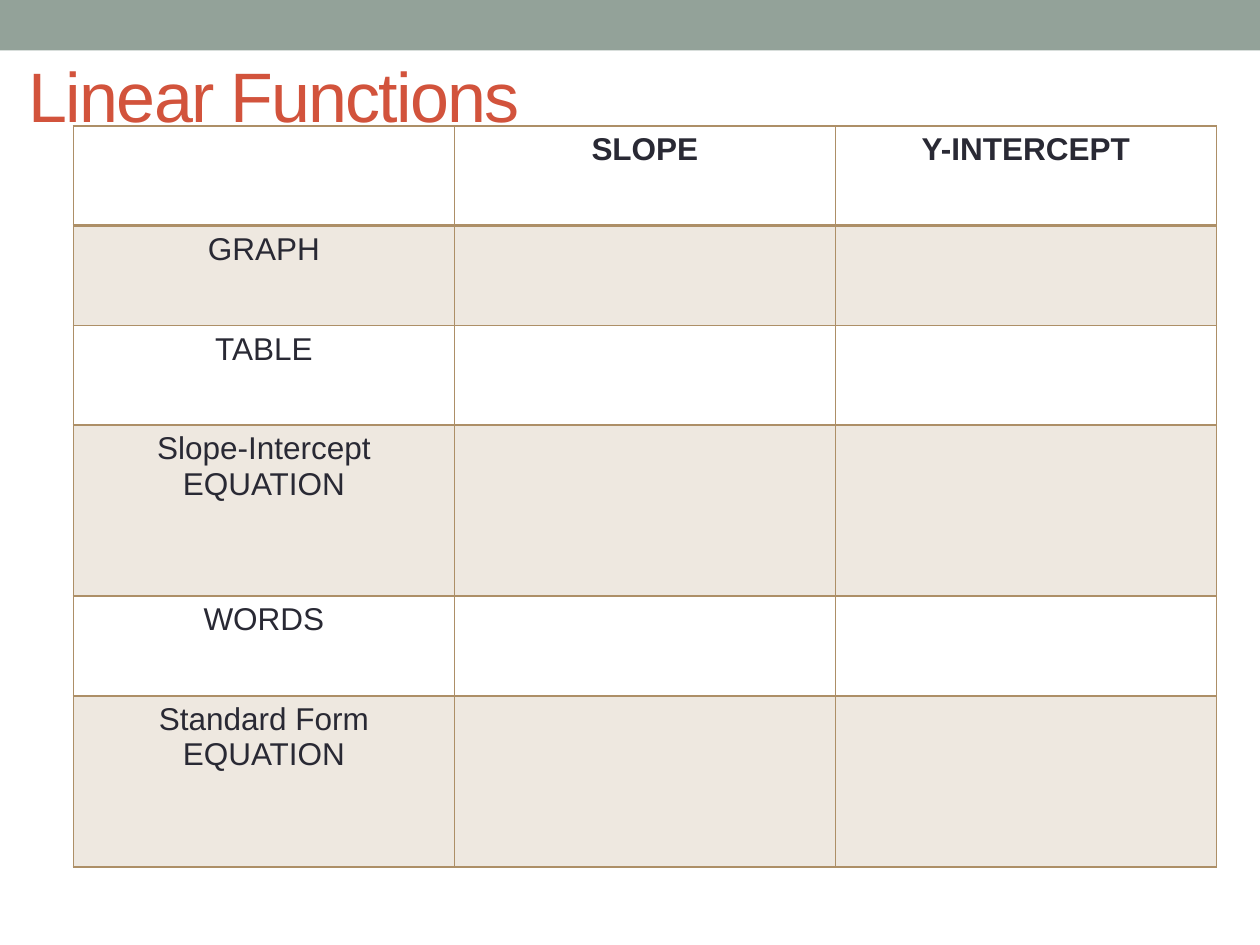
"""Build the Linear Functions comparison table slide."""
from dataclasses import dataclass

import lxml.etree
import pptx
import pptx.dml.color
import pptx.enum.shapes
import pptx.enum.text
import pptx.oxml.ns
import pptx.slide
import pptx.table
import pptx.text.text
import pptx.util

Cm = pptx.util.Cm
qn = pptx.oxml.ns.qn


@dataclass(frozen=True)
class Theme:
    """Colours, font and type sizes of the slide."""
    font: str = "Arial"
    banner: str = "93A299"
    title: str = "D2533C"
    text: str = "292934"
    table: str = "AD8F67"
    title_size: int = 40
    table_size: int = 18
    title_spacing: int = -100
    band_opacity: int = 20000


@dataclass(frozen=True)
class TableRow:
    """First-column label, remaining entries and height in centimetres."""
    cells: tuple[str, str, str]
    height: float = 2.01
    header: bool = False
    banded: bool = False


THEME = Theme()
COLUMN_WIDTH = 7.68
ROWS = (
    TableRow(("", "SLOPE", "Y-INTERCEPT"), header=True),
    TableRow(("GRAPH", "", ""), banded=True),
    TableRow(("TABLE", "", "")),
    TableRow(("Slope-Intercept EQUATION", "", ""), height=3.45, banded=True),
    TableRow(("WORDS", "", "")),
    TableRow(("Standard Form EQUATION", "", ""), height=3.45, banded=True),
)


def rgb(color: str) -> pptx.dml.color.RGBColor:
    """Convert a hexadecimal string to a colour."""
    return pptx.dml.color.RGBColor.from_string(color)


def style_paragraph(paragraph: pptx.text.text._Paragraph, size: int, color: str,
                    bold: bool = False) -> None:
    """Set the font of a whole paragraph."""
    font = paragraph.font
    font.name = THEME.font
    font.size = pptx.util.Pt(size)
    font.bold = bold
    font.color.rgb = rgb(color)


def add_banner(slide: pptx.slide.Slide, width: int) -> None:
    """Draw the band across the top."""
    banner = slide.shapes.add_shape(
        pptx.enum.shapes.MSO_SHAPE.RECTANGLE, 0, 0, width, Cm(1.02))
    banner.shadow.inherit = False
    banner.fill.solid()
    banner.fill.fore_color.rgb = rgb(THEME.banner)
    banner.line.fill.background()


def add_title(slide: pptx.slide.Slide, text: str) -> None:
    """Place the slide title."""
    frame = slide.shapes.add_textbox(Cm(0.33), Cm(0.53), Cm(22.86), Cm(2.74)).text_frame
    frame.word_wrap = True
    frame.vertical_anchor = pptx.enum.text.MSO_ANCHOR.MIDDLE
    paragraph = frame.paragraphs[0]
    run = paragraph.add_run()
    run.text = text
    run._r.get_or_add_rPr().set("spc", str(THEME.title_spacing))
    style_paragraph(paragraph, THEME.title_size, THEME.title)


def set_borders(cell: pptx.table._Cell, bottom: int, top: int) -> None:
    """Outline a cell, with its top and bottom widths in points."""
    properties = cell._tc.get_or_add_tcPr()
    widths = {"a:lnL": 1, "a:lnR": 1, "a:lnT": top, "a:lnB": bottom}
    for position, (tag, width) in enumerate(widths.items()):
        line = lxml.etree.Element(qn(tag), w=str(pptx.util.Pt(width)))
        fill = lxml.etree.SubElement(line, qn("a:solidFill"))
        lxml.etree.SubElement(fill, qn("a:srgbClr"), val=THEME.table)
        properties.insert(position, line)


def fill_cell(cell: pptx.table._Cell, banded: bool) -> None:
    """Tint a banded cell and leave any other clear."""
    if not banded:
        cell.fill.background()
        return
    cell.fill.solid()
    cell.fill.fore_color.rgb = rgb(THEME.table)
    color = cell._tc.tcPr.find(".//" + qn("a:srgbClr"))
    lxml.etree.SubElement(color, qn("a:alpha"), val=str(THEME.band_opacity))


def add_function_table(slide: pptx.slide.Slide, rows: tuple[TableRow, ...]) -> None:
    """Add the table of function representations."""
    column_count = len(rows[0].cells)
    table = slide.shapes.add_table(
        len(rows), column_count, Cm(1.48), Cm(2.54),
        Cm(COLUMN_WIDTH * column_count), Cm(sum(row.height for row in rows))).table
    table.first_row = False
    table.horz_banding = False
    for column in table.columns:
        column.width = Cm(COLUMN_WIDTH)
    for row_index, row in enumerate(rows):
        table.rows[row_index].height = Cm(row.height)
        below_header = row_index > 0 and rows[row_index - 1].header
        for column_index, text in enumerate(row.cells):
            cell = table.cell(row_index, column_index)
            cell.text = text
            paragraph = cell.text_frame.paragraphs[0]
            paragraph.alignment = pptx.enum.text.PP_ALIGN.CENTER
            style_paragraph(paragraph, THEME.table_size, THEME.text, row.header)
            fill_cell(cell, row.banded)
            set_borders(cell, bottom=2 if row.header else 1, top=2 if below_header else 1)


def main() -> None:
    """Build and save the presentation."""
    presentation = pptx.Presentation()
    presentation.slide_width = Cm(25.4)
    presentation.slide_height = Cm(19.05)
    slide = presentation.slides.add_slide(presentation.slide_layouts[6])
    add_banner(slide, presentation.slide_width)
    add_title(slide, "Linear Functions")
    add_function_table(slide, ROWS)
    presentation.save("out.pptx")


if __name__ == "__main__":
    main()
